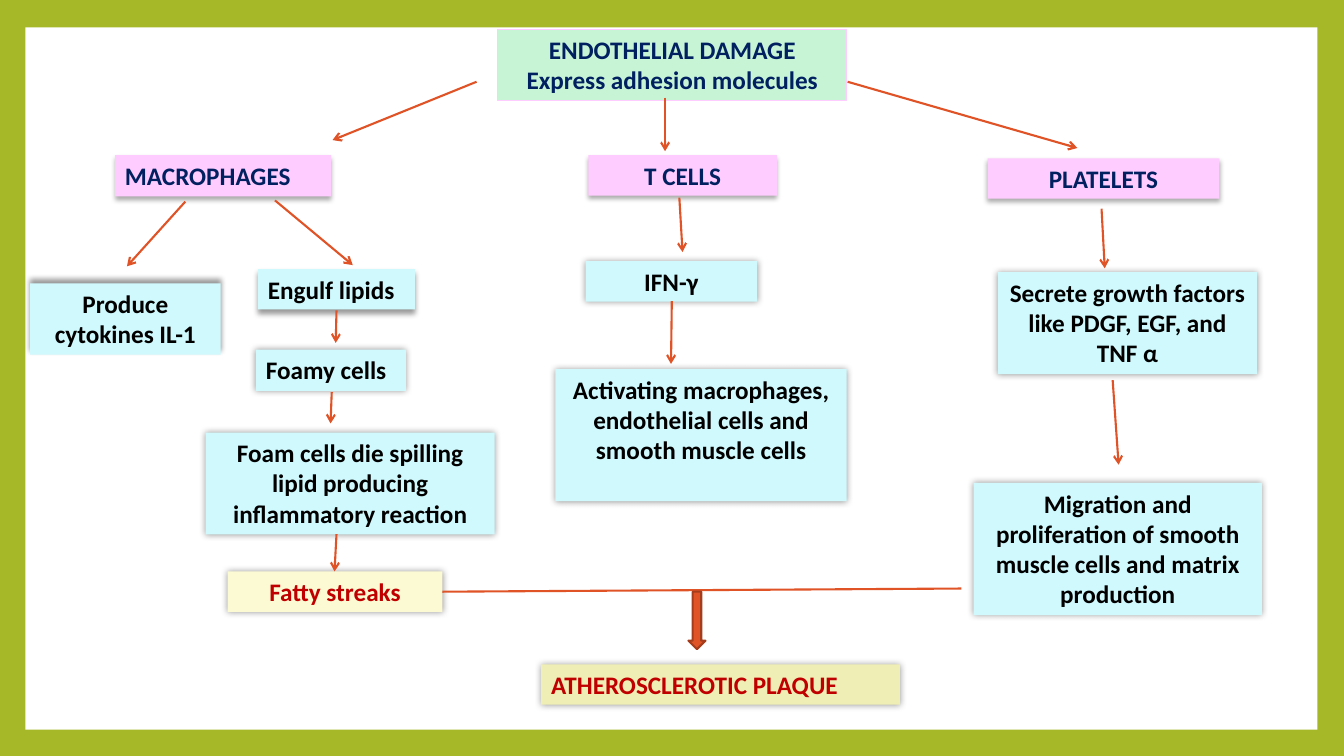
from lxml import etree
from pptx import Presentation
from pptx.dml.color import RGBColor
from pptx.enum import shapes, text
from pptx.oxml import ns
from pptx.util import Cm, Pt

GREEN = RGBColor(0xA6, 0xB7, 0x27)
WHITE = RGBColor(0xFF, 0xFF, 0xFF)
BLACK = RGBColor(0x00, 0x00, 0x00)
MINT = RGBColor(0xC8, 0xF4, 0xD6)
PINK = RGBColor(0xFF, 0xCC, 0xFF)
CYAN = RGBColor(0xCF, 0xF9, 0xFD)
CREAM = RGBColor(0xFB, 0xFA, 0xD2)
KHAKI = RGBColor(0xEF, 0xEE, 0xB5)
NAVY = RGBColor(0x00, 0x20, 0x60)
RED = RGBColor(0xC0, 0x00, 0x00)
ORANGE = RGBColor(0xDF, 0x53, 0x27)
RUST = RGBColor(0xA5, 0x3D, 0x1D)

RECT = shapes.MSO_SHAPE.RECTANGLE
LEFT, CENTER = text.PP_ALIGN.LEFT, text.PP_ALIGN.CENTER

# Shadows: opacity in percent, blur and distance in points, direction in degrees
GLOW = (40, 5, 0, 0)
BELOW = (32, 3.5, 2.2, 90)
DEEP = (40, 4, 3, 90)
ABOVE = (40, 4, 3, 270)


def add_child(parent, tag, **attrs):
    el = etree.SubElement(parent, ns.qn(tag))
    for name, value in attrs.items():
        el.set(name, str(value))
    return el


def add_shadow(sp, opacity, blur, dist, angle):
    effects = sp._element.spPr.find(ns.qn("a:effectLst"))
    outer = add_child(effects, "a:outerShdw", blurRad=Pt(blur), dist=Pt(dist),
                      dir=angle * 60000, algn="ctr", rotWithShape=0)
    color = add_child(outer, "a:srgbClr", val=BLACK)
    add_child(color, "a:alpha", val=opacity * 1000)


def add_shape(s, kind, at, fill, line=None, width=0.75):
    sp = s.shapes.add_shape(kind, *[Cm(v) for v in at])
    sp.shadow.inherit = False
    sp.fill.solid()
    sp.fill.fore_color.rgb = fill
    if line is None:
        sp.line.fill.background()
    else:
        sp.line.color.rgb = line
        sp.line.width = Pt(width)
    return sp


def write(sp, content, color=BLACK, align=CENTER, size=18):
    tf = sp.text_frame
    tf.word_wrap = True
    tf.vertical_anchor = text.MSO_ANCHOR.TOP
    tf.auto_size = text.MSO_AUTO_SIZE.SHAPE_TO_FIT_TEXT
    for i, line in enumerate(content.split("\n")):
        p = tf.add_paragraph() if i else tf.paragraphs[0]
        p.alignment = align
        r = p.add_run()
        r.text = line
        r.font.name = "Calibri"
        r.font.size = Pt(size)
        r.font.bold = True
        r.font.color.rgb = color


def add_box(s, content, at, fill=CYAN, shadow=GLOW, line=None, **fmt):
    sp = add_shape(s, RECT, at, fill, line)
    if shadow:
        add_shadow(sp, *shadow)
    write(sp, content, **fmt)


def add_line(s, ends, arrow=True):
    cx = s.shapes.add_connector(shapes.MSO_CONNECTOR.STRAIGHT,
                                *[Cm(v) for v in ends])
    cx.line.color.rgb = ORANGE
    cx.line.width = Pt(1.5)
    if arrow:
        add_child(cx.line._get_or_add_ln(), "a:tailEnd", type="arrow")
    add_child(cx._element.spPr, "a:effectLst")


def main():
    prs = Presentation()
    prs.slide_width, prs.slide_height = Cm(33.87), Cm(19.05)
    s = prs.slides.add_slide(prs.slide_layouts[6])

    # Green frame around a white panel
    s.background.fill.solid()
    s.background.fill.fore_color.rgb = GREEN
    add_shape(s, RECT, (0.64, 0.69, 32.56, 17.7), WHITE)

    # Starting event and the three cell types
    add_box(s, "ENDOTHELIAL DAMAGE\nExpress adhesion molecules",
            (12.55, 0.74, 8.79, 1.8), MINT, None, PINK, color=NAVY)
    for content, at, align in (
        ("MACROPHAGES", (2.9, 3.91, 5.44, 1.04), LEFT),
        ("T CELLS", (14.83, 3.91, 4.75, 1.02), CENTER),
        ("PLATELETS", (24.89, 3.99, 5.84, 1.02), CENTER),
    ):
        add_box(s, content, at, PINK, BELOW, color=NAVY, align=align)

    # Macrophage branch
    add_box(s, "Engulf lipids", (6.5, 6.78, 3.96, 1.02), shadow=DEEP, align=LEFT)
    add_box(s, "Foamy cells", (6.45, 8.81, 3.78, 1.04), align=LEFT)
    add_box(s, "Foam cells die spilling lipid producing inflammatory reaction",
            (5.18, 10.9, 7.29, 2.57))
    add_box(s, "Fatty streaks", (5.74, 14.4, 5.41, 1.02), CREAM, color=RED)
    add_box(s, "Produce cytokines IL-1", (0.76, 7.14, 4.8, 1.8), shadow=ABOVE)

    # T cell branch
    add_box(s, "IFN-γ", (14.76, 6.58, 4.32, 1.02))
    add_box(s, "Activating macrophages, endothelial cells and smooth muscle cells",
            (14, 9.3, 7.34, 3.33))

    # Platelet branch
    add_box(s, "Secrete growth factors like PDGF, EGF, and TNF α",
            (25.15, 6.86, 6.53, 2.57))
    add_box(s, "Migration and proliferation of smooth muscle cells and matrix "
            "production", (24.54, 12.17, 7.26, 3.33))

    # Outcome
    add_box(s, "ATHEROSCLEROTIC PLAQUE", (13.64, 16.74, 9.04, 1.02), KHAKI,
            color=RED, align=LEFT)
    add_line(s, (11.15, 14.91, 24.23, 14.83), arrow=False)
    add_shape(s, shapes.MSO_SHAPE.DOWN_ARROW, (17.35, 14.91, 0.43, 1.45),
              ORANGE, RUST, 1.5)

    # Arrows between the steps: start x, y and end x, y
    for ends in (
        (12.01, 2.06, 8.38, 3.53),
        (16.76, 2.46, 16.76, 3.81),
        (21.36, 2.06, 27.15, 3.73),
        (4.67, 5.08, 3.2, 6.71),
        (6.93, 5.05, 8.89, 6.68),
        (8.48, 7.82, 8.46, 8.64),
        (8.36, 9.88, 8.33, 10.67),
        (8.48, 13.46, 8.43, 14.4),
        (17.12, 4.98, 17.2, 6.35),
        (16.93, 7.59, 16.91, 9.17),
        (27.76, 5.26, 27.84, 6.76),
        (28.04, 9.58, 28.19, 11.71),
    ):
        add_line(s, ends)

    prs.save("out.pptx")


if __name__ == "__main__":
    main()
